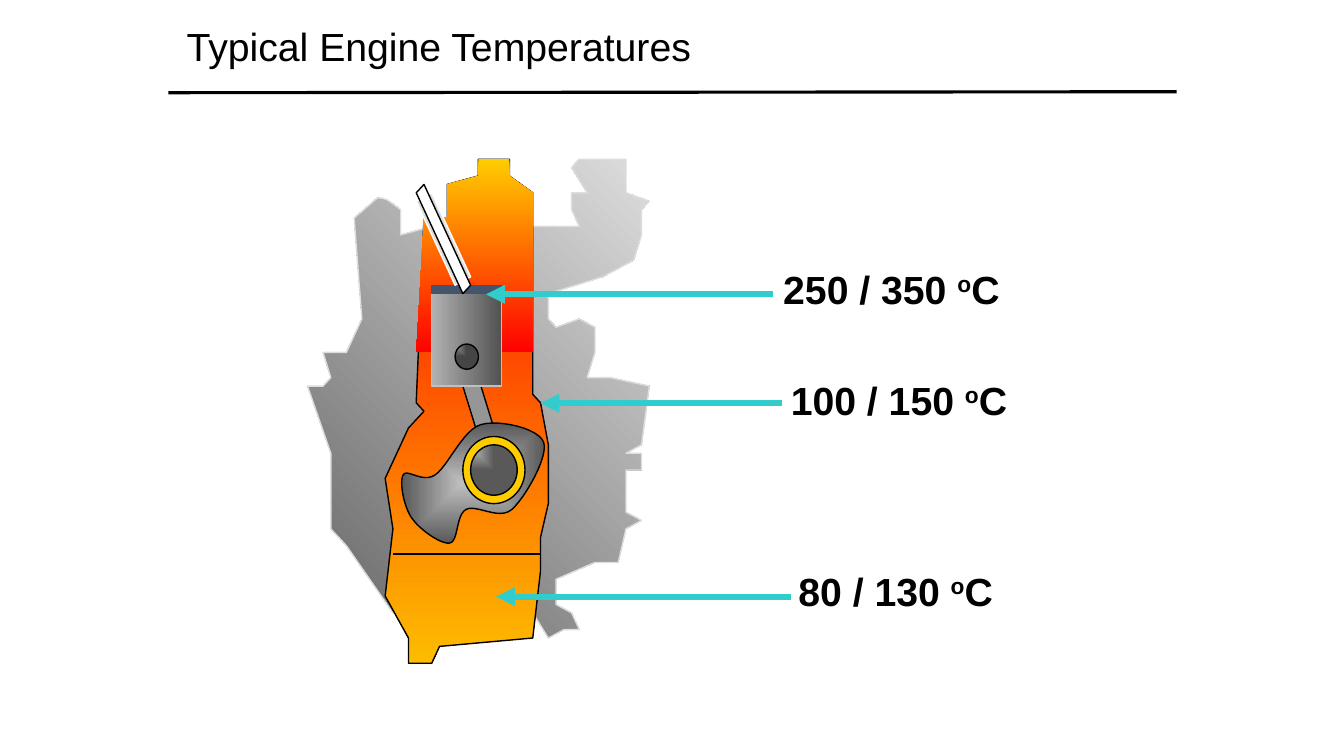
import dataclasses

import pptx
import pptx.dml.color
import pptx.enum.shapes
import pptx.enum.text
import pptx.oxml
import pptx.oxml.ns
import pptx.util

Inches = pptx.util.Inches
Pt = pptx.util.Pt
SHAPES = pptx.enum.shapes.MSO_SHAPE
FONT = "Arial"
COLUMNS, ROWS = 44, 60
STEPS_PER_CURVE = 12
DOWN, RIGHT, UP_RIGHT = 270, 0, 45
FROM_CENTER = (50, 50, 50, 50)
FROM_TOP_LEFT = (0, 0, 100, 100)

COLORS = {
    "black": "000000", "white": "FFFFFF", "arrow": "33CCCC",
    "housing": "666666", "pale": "DDDDDD",
    "red": "FF0000", "oil": "FDBC00", "yellow": "FFCC00",
    "rod": "969696", "silver": "C0C0C0", "shaft": "595959",
    "piston light": "B2B2B2", "piston dark": "525252",
    "pin": "454545", "crown": "44546A",
}

LEFT_FLANK = [(9, 4.6), (6, 7), (7, 19), (5, 23), (2, 23), (3, 26), (2, 27),
              (0, 27), (3, 35), (3, 44), (5, 46), (11, 54)]
SUMP_FLANGE = [(29, 54), (31, 57), (33, 56), (35, 56), (34, 54), (32, 53),
               (32, 50), (37, 48), (40, 48)]
RIGHT_FLANK = [(41, 44), (43, 43), (41, 42), (41, 37), (43, 37), (43, 35),
               (41, 35), (43, 34), (44, 27), (39, 26), (36, 26), (37, 23),
               (37, 20), (35, 19), (32, 20), (31, 19)]
INTAKE = [(31, 16), (38, 14), (42, 12), (43, 9), (43, 6), (44, 5), (41, 4),
          (41, 0), (35, 0), (34, 1), (36, 4), (34, 4), (34, 6), (35, 8)]
EXHAUST = [(16, 8), (12, 9), (12, 6), (10.3, 4.85), (9.7, 4.65)]
HOUSING = LEFT_FLANK + SUMP_FLANGE + RIGHT_FLANK + INTAKE + EXHAUST

CYLINDER_HEAD = [(15, 7), (18, 7), (18, 3), (22, 2), (22, 0), (26, 0),
                 (26, 2), (29, 4)]
CYLINDER = CYLINDER_HEAD + [(29, 23), (14, 23)]
CRANKCASE = CYLINDER_HEAD + [
    (29, 28), (30, 29), (31, 34), (31, 41), (30, 45), (30, 49), (29, 57),
    (17, 58), (16, 60), (13, 60), (13, 57), (10, 52), (11, 44), (10, 38),
    (13, 32), (15, 30), (14, 29)]
CRANK_KNOTS = [(22.3, 31.6), (16.4, 37.6), (12.3, 37.6), (13.4, 42.7),
               (18.3, 45.7), (20.4, 41.7), (26.3, 41.7), (30.4, 33.7)]


@dataclasses.dataclass
class Callout:
    temperature: str
    arrow_tip: float
    arrow_drop: float
    label_drop: float


CALLOUTS = [
    Callout("250 / 350 ", 0, 0.34, 0),
    Callout("100 / 150 ", 0.54, 1.42, 1.1),
    Callout("80 / 130 ", 0.1, 3.34, 3),
]


def rgb(name):
    return pptx.dml.color.RGBColor.from_string(COLORS[name])


def drawing_element(tag, attributes="", content=""):
    namespace = pptx.oxml.ns.nsdecls("a")
    return pptx.oxml.parse_xml(f"<a:{tag} {namespace} {attributes}>{content}</a:{tag}>")


def fill_gradient(shape, start, end, direction):
    shape.fill.gradient()
    for stop, name in zip(shape.fill.gradient_stops, (start, end)):
        stop.color.rgb = rgb(name)
    if isinstance(direction, int):
        shape.fill.gradient_angle = direction
        return
    sides = " ".join(f'{side}="{percent * 1000}"' for side, percent in zip("ltrb", direction))
    linear = next(shape._element.spPr.iter(pptx.oxml.ns.qn("a:lin")))
    linear.getparent().replace(
        linear, drawing_element("path", 'path="rect"', f"<a:fillToRect {sides}/>"))


def paint(shape, fill, line=None):
    shape.shadow.inherit = False
    if isinstance(fill, tuple):
        fill_gradient(shape, *fill)
    else:
        shape.fill.solid()
        shape.fill.fore_color.rgb = rgb(fill)
    if line:
        shape.line.color.rgb = rgb(line)
        shape.line.width = Pt(1)
    else:
        shape.line.fill.background()


def add_line(slide, start, end, color, width, arrow=False):
    connector = slide.shapes.add_connector(
        pptx.enum.shapes.MSO_CONNECTOR.STRAIGHT,
        *(Inches(length) for length in (*start, *end)))
    connector.line.color.rgb = rgb(color)
    connector.line.width = Pt(width)
    if arrow:
        connector.line._get_or_add_ln().append(drawing_element("headEnd", 'type="triangle"'))
    connector._element.spPr.append(drawing_element("effectLst"))


def add_run(paragraph, text, bold=False, raised_percent=0):
    run = paragraph.add_run()
    run.text = text
    run.font.name = FONT
    run.font.size = Pt(28)
    run.font.bold = bold
    run.font.color.rgb = rgb("black")
    if raised_percent:
        run._r.get_or_add_rPr().set("baseline", str(raised_percent * 1000))


def bar(start, along, across):
    (x, y), (length_x, length_y), (side_x, side_y) = start, along, across
    return [(x, y), (x + length_x, y + length_y),
            (x + length_x + side_x, y + length_y + side_y), (x + side_x, y + side_y)]


def smooth_loop(knots):
    def spline(a, b, c, d, t):
        return b + t / 2 * (c - a + t * (2 * a - 5 * b + 4 * c - d + t * (3 * (b - c) + d - a)))

    points = []
    for index in range(len(knots)):
        neighbours = [knots[(index + offset) % len(knots)] for offset in (-1, 0, 1, 2)]
        for step in range(STEPS_PER_CURVE):
            points.append(tuple(spline(*axis, step / STEPS_PER_CURVE)
                                for axis in zip(*neighbours)))
    return points


def add_header(slide, left, top, width):
    title = slide.shapes.title
    title.left, title.top = Inches(left + 0.08), Inches(top)
    title.width, title.height = Inches(8.5), Inches(0.67)
    frame = title.text_frame
    frame.word_wrap = True
    frame.auto_size = pptx.enum.text.MSO_AUTO_SIZE.NONE
    frame.vertical_anchor = pptx.enum.text.MSO_ANCHOR.TOP
    paragraph = frame.paragraphs[0]
    paragraph.alignment = pptx.enum.text.PP_ALIGN.LEFT
    add_run(paragraph, "Typical Engine Temperatures")
    add_line(slide, (left, top + 0.75), (left + width, top + 0.74), "black", 2.25)


def add_engine(slide, left, top, width, height):
    cell_width, cell_height = width / COLUMNS, height / ROWS

    def place(column, row):
        return left + column * cell_width, top + row * cell_height

    def add_outline(points, fill, line=None):
        first, *others = [tuple(map(Inches, place(*point))) for point in points]
        builder = slide.shapes.build_freeform(*first, scale=1.0)
        builder.add_line_segments(others, close=True)
        paint(builder.convert_to_shape(), fill, line)

    def add_part(kind, column, row, columns, rows, fill, line):
        lengths = (*place(column, row), columns * cell_width, rows * cell_height)
        paint(slide.shapes.add_shape(kind, *map(Inches, lengths)), fill, line)

    def add_disc(center, diameter, fill):
        column, row = (middle - diameter / 2 for middle in center)
        add_part(SHAPES.OVAL, column, row, diameter, diameter, fill, "black")

    add_outline(HOUSING, ("housing", "pale", UP_RIGHT), "pale")
    add_outline(CRANKCASE, ("red", "oil", DOWN), "black")
    add_outline(CYLINDER, ("yellow", "red", DOWN))

    connecting_rod = bar(start=(19, 24), along=(3, 9), across=(2, -1))
    add_outline(connecting_rod, "rod", "black")
    add_outline(smooth_loop(CRANK_KNOTS), ("silver", "shaft", FROM_CENTER), "black")

    add_part(SHAPES.RECTANGLE, 16, 16, 9, 11, ("piston light", "piston dark", RIGHT), "silver")
    piston_pin, crank_bearing = (20.5, 23.5), (24, 37)
    add_disc(piston_pin, 3, ("rod", "pin", FROM_TOP_LEFT))
    add_disc(crank_bearing, 8, "yellow")
    add_disc(crank_bearing, 6, ("silver", "shaft", FROM_TOP_LEFT))
    add_part(SHAPES.RECTANGLE, 16, 15, 9, 1, "crown", "crown")

    valve_shade = bar(start=(14, 5), along=(5, 10), across=(2, -1))
    valve = bar(start=(14, 4), along=(6, 12), across=(1, -1))
    add_outline(valve_shade, "pale", "white")
    add_outline(valve, "white", "black")

    oil_level = 47
    add_line(slide, place(11, oil_level), place(30, oil_level), "black", 1)


def add_callouts(slide, left, top):
    for index, callout in enumerate(CALLOUTS):
        arrow_top = top + callout.arrow_drop
        arrow_tail = left + 2.85 + 0.09 * index
        add_line(slide, (left + callout.arrow_tip, arrow_top), (arrow_tail, arrow_top),
                 "arrow", 4.5, arrow=True)
        label_left = left + 2.85 + 0.075 * index
        label = slide.shapes.add_textbox(Inches(label_left), Inches(top + callout.label_drop),
                                         Inches(2.66), Inches(0.57))
        label.text_frame.word_wrap = True
        label.text_frame.auto_size = pptx.enum.text.MSO_AUTO_SIZE.SHAPE_TO_FIT_TEXT
        paragraph = label.text_frame.paragraphs[0]
        for text, raised_percent in ((callout.temperature, 0), ("o", 30), ("C", 0)):
            add_run(paragraph, text, True, raised_percent)


def main():
    presentation = pptx.Presentation()
    presentation.slide_width = Inches(13.33)
    presentation.slide_height = Inches(7.5)
    title_only = presentation.slide_layouts.get_by_name("Title Only")
    slide = presentation.slides.add_slide(title_only)
    add_engine(slide, left=3.05, top=1.58, width=3.39, height=5)
    add_callouts(slide, left=4.82, top=2.58)
    add_header(slide, left=1.67, top=0.17, width=10)
    presentation.save("out.pptx")


if __name__ == "__main__":
    main()
